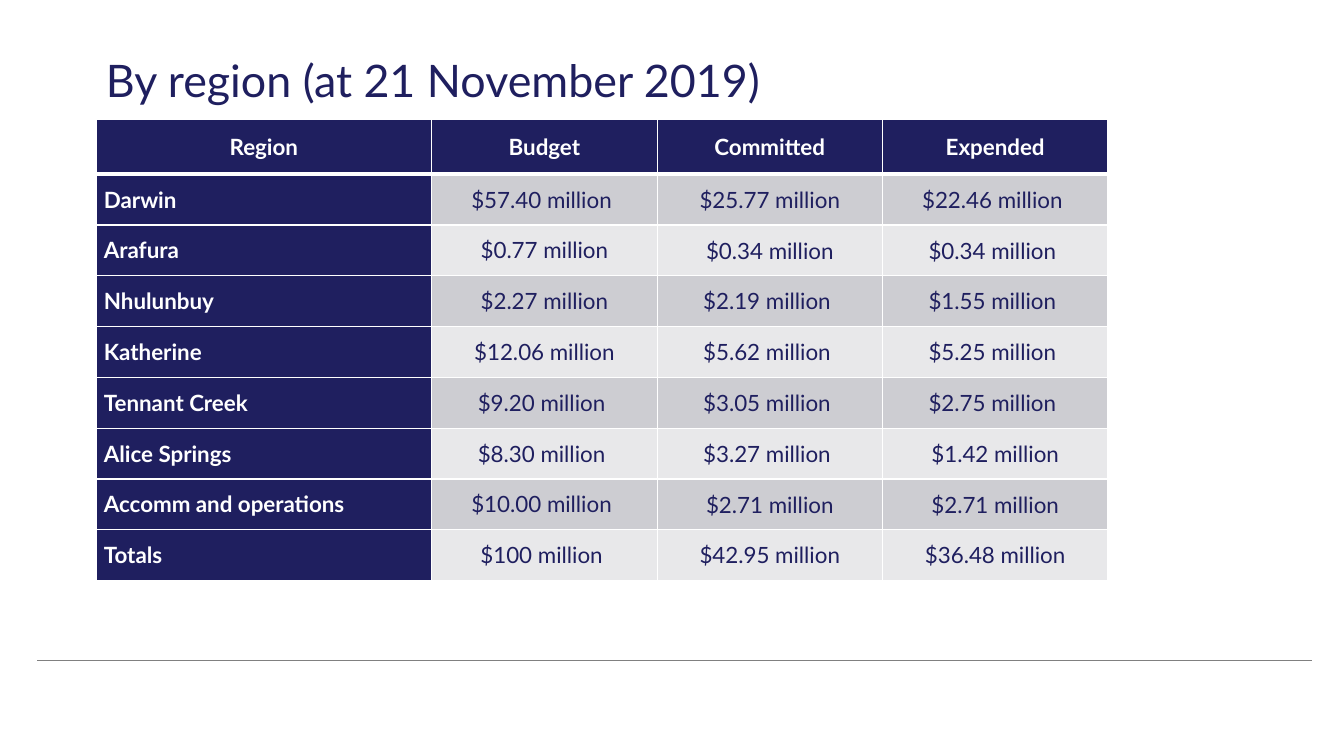
from lxml import etree
from pptx import Presentation
from pptx.dml.color import RGBColor
from pptx.enum.shapes import MSO_CONNECTOR
from pptx.enum.text import MSO_ANCHOR, PP_ALIGN
from pptx.oxml.ns import qn
from pptx.util import Cm, Pt

STRAIGHT = MSO_CONNECTOR.STRAIGHT
TOP, MIDDLE = MSO_ANCHOR.TOP, MSO_ANCHOR.MIDDLE
LEFT, CENTER = PP_ALIGN.LEFT, PP_ALIGN.CENTER

COLORS = {
    "navy": "1F1F5F",
    "white": "FFFFFF",
    "dark_band": "CDCDD2",
    "light_band": "E8E8EA",
    "rule": "808080",
}
FONT = "Lato"
COLUMN_WIDTHS = [8.46, 5.68, 5.68, 5.68]
HEADER_HEIGHT, ROW_HEIGHT = 1.39, 1.28
WIDE_MARGINS = (0.2, 0.3)
NARROW_MARGINS = (0.18, 0)

REGIONS = [
    ("Region", "Budget", "Committed", "Expended"),
    ("Darwin", "$57.40 million ", "$25.77 million", "$22.46 million "),
    ("Arafura", "$0.77 million", "$0.34 million", "$0.34 million "),
    ("Nhulunbuy", "$2.27 million", "$2.19 million ", "$1.55 million "),
    ("Katherine", "$12.06 million", "$5.62 million ", "$5.25 million "),
    ("Tennant Creek", "$9.20 million ", "$3.05 million ", "$2.75 million "),
    ("Alice Springs", "$8.30 million ", "$3.27 million ", "$1.42 million"),
    ("Accomm and operations", "$10.00 million ", "$2.71 million", "$2.71 million"),
    ("Totals", "$100 million ", "$42.95 million", "$36.48 million"),
]


def rgb(name):
    return RGBColor.from_string(COLORS[name])


class RegionSlide:
    """Holds the current slide and draws each kind of element in its style."""

    def __init__(self, presentation):
        self.slide = presentation.slides.add_slide(presentation.slide_layouts[6])

    def add_text(self, paragraph, text, size, color, bold=False):
        run = paragraph.add_run()
        run.text = text
        run.font.name = FONT
        run.font.size = Pt(size)
        run.font.bold = bold
        run.font.color.rgb = rgb(color)

    def rule(self, left, right, top):
        line = self.slide.shapes.add_connector(
            STRAIGHT, Cm(left), Cm(top), Cm(right), Cm(top))
        line.line.color.rgb = rgb("rule")
        line.line.width = Pt(1)
        etree.SubElement(line._element.spPr, qn("a:effectLst"))

    def title(self, text, left, top, width, height):
        box = self.slide.shapes.add_textbox(Cm(left), Cm(top), Cm(width), Cm(height))
        frame = box.text_frame
        frame.word_wrap = True
        frame.vertical_anchor = TOP
        paragraph = frame.paragraphs[0]
        paragraph.line_spacing = Pt(43.9)
        self.add_text(paragraph, text, 32, "navy")

    def borders(self, cell, top, bottom):
        """Give a cell white borders: 1 pt at the sides, as asked above and below."""
        properties = cell._tc.get_or_add_tcPr()
        for tag, points in (("lnL", 1), ("lnR", 1), ("lnT", top), ("lnB", bottom)):
            line = etree.SubElement(properties, qn(f"a:{tag}"), w=str(Pt(points)))
            fill = etree.SubElement(line, qn("a:solidFill"))
            etree.SubElement(fill, qn("a:srgbClr"), val=COLORS["white"])

    def cell(self, cell, text, row, column):
        is_header, is_region = row == 0, column == 0
        is_heading = is_header or is_region
        self.borders(cell, 3 if row == 1 else 1, 3 if is_header else 1)
        band = "dark_band" if row % 2 else "light_band"
        cell.fill.solid()
        cell.fill.fore_color.rgb = rgb("navy" if is_heading else band)

        side, end = WIDE_MARGINS if is_header or column < 2 else NARROW_MARGINS
        cell.margin_left = cell.margin_right = Cm(side)
        cell.margin_top = cell.margin_bottom = Cm(end)
        cell.vertical_anchor = TOP if not is_header and column < 2 else MIDDLE

        paragraph = cell.text_frame.paragraphs[0]
        paragraph.alignment = LEFT if is_region and not is_header else CENTER
        paragraph.space_after = Pt(6)
        self.add_text(paragraph, text, 16, "white" if is_heading else "navy", is_heading)

    def table(self, rows, left, top):
        heights = [HEADER_HEIGHT] + [ROW_HEIGHT] * (len(rows) - 1)
        table = self.slide.shapes.add_table(
            len(rows), len(COLUMN_WIDTHS), Cm(left), Cm(top),
            Cm(sum(COLUMN_WIDTHS)), Cm(sum(heights))).table
        table.first_col = True
        for column, width in zip(table.columns, COLUMN_WIDTHS):
            column.width = Cm(width)
        for table_row, height in zip(table.rows, heights):
            table_row.height = Cm(height)
        for row, texts in enumerate(rows):
            for column, text in enumerate(texts):
                self.cell(table.cell(row, column), text, row, column)


def main():
    presentation = Presentation()
    presentation.slide_width = Cm(33.87)
    presentation.slide_height = Cm(19.05)
    slide = RegionSlide(presentation)
    slide.rule(0.94, 33.07, 16.64)
    slide.title("By region (at 21 November 2019)", 2.42, 1, 29.18, 2)
    slide.table(REGIONS, 2.42, 3)
    presentation.save("out.pptx")


if __name__ == "__main__":
    main()
